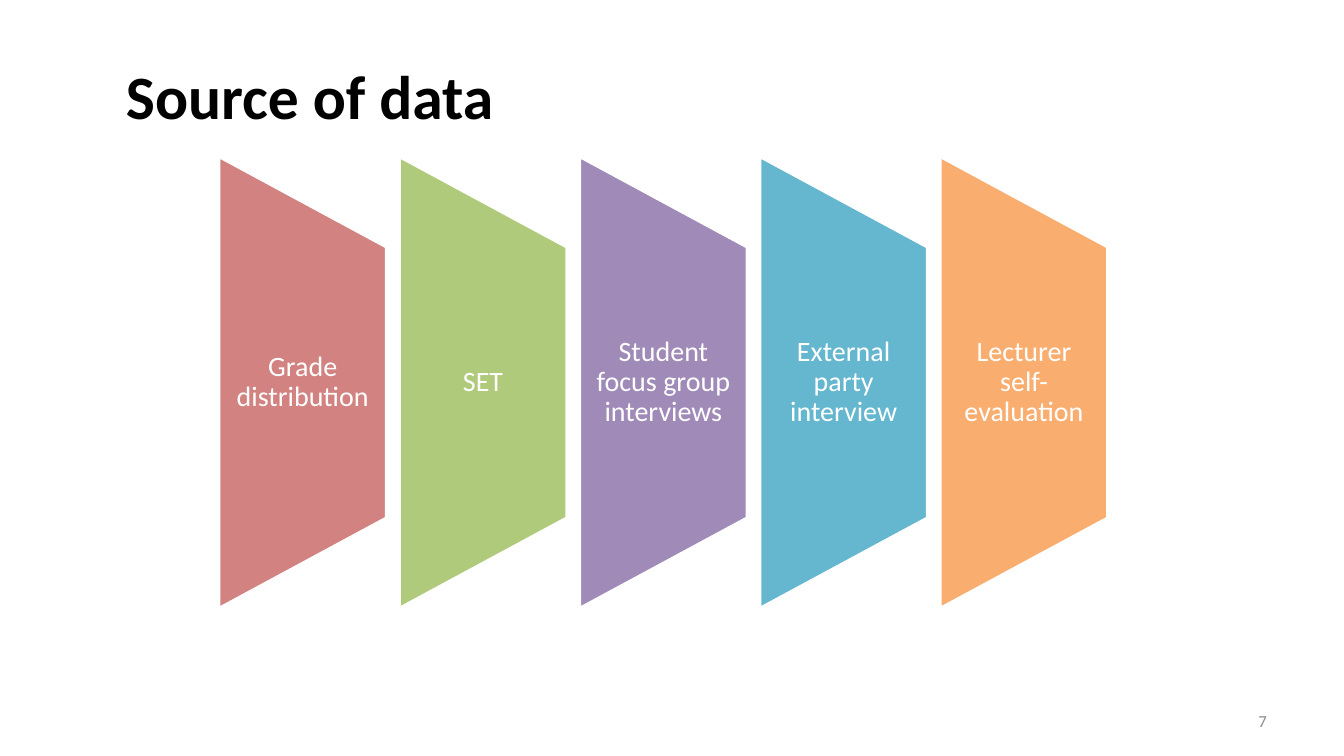
from dataclasses import dataclass

import pptx
import pptx.dml.color
import pptx.enum.shapes
import pptx.enum.text
import pptx.slide
import pptx.text.text
import pptx.util

Pt = pptx.util.Pt
Align = pptx.enum.text.PP_ALIGN

PANEL_LEFT, PANEL_STEP = 156.5, 128.8
PANEL_WIDTH, PANEL_HEIGHT = 119.5, 322.5
PANEL_MIDDLE = 273.2
LABEL_HEIGHT = 193.6


@dataclass(frozen=True)
class DataSource:
    label: str
    colour: str


DATA_SOURCES = [
    DataSource("Grade distribution", "D28280"),
    DataSource("SET", "B0CA7C"),
    DataSource("Student focus group interviews", "9F8AB8"),
    DataSource("External party interview", "64B7CE"),
    DataSource("Lecturer self-evaluation", "F9AD6F"),
]


def rgb(colour: str) -> pptx.dml.color.RGBColor:
    return pptx.dml.color.RGBColor.from_string(colour)


def write(frame: pptx.text.text.TextFrame, text: str, *, size: float,
          colour: str, align: Align, bold: bool = False,
          line_spacing: float = 1.0, side_inset: float = 7.2,
          end_inset: float = 3.6) -> None:
    frame.word_wrap = True
    frame.auto_size = pptx.enum.text.MSO_AUTO_SIZE.NONE
    frame.vertical_anchor = pptx.enum.text.MSO_ANCHOR.MIDDLE
    frame.margin_left = frame.margin_right = Pt(side_inset)
    frame.margin_top = frame.margin_bottom = Pt(end_inset)
    paragraph = frame.paragraphs[0]
    paragraph.alignment = align
    paragraph.line_spacing = line_spacing
    run = paragraph.add_run()
    run.text = text
    run.font.name = "Calibri"
    run.font.size = Pt(size)
    run.font.bold = bold
    run.font.color.rgb = rgb(colour)


def draw_panel(slide: pptx.slide.Slide, source: DataSource, left: float) -> None:
    """Draw a trapezoid on its side, with an upright label over it."""
    centre = left + PANEL_WIDTH / 2
    panel = slide.shapes.add_shape(
        pptx.enum.shapes.MSO_SHAPE.FLOWCHART_MANUAL_OPERATION,
        Pt(centre - PANEL_HEIGHT / 2), Pt(PANEL_MIDDLE - PANEL_WIDTH / 2),
        Pt(PANEL_HEIGHT), Pt(PANEL_WIDTH))
    panel.rotation = 270
    panel.shadow.inherit = False
    panel.fill.solid()
    panel.fill.fore_color.rgb = rgb(source.colour)
    panel.line.color.rgb = rgb("FFFFFF")
    panel.line.width = Pt(2)

    label = slide.shapes.add_textbox(
        Pt(left), Pt(PANEL_MIDDLE - LABEL_HEIGHT / 2),
        Pt(PANEL_WIDTH), Pt(LABEL_HEIGHT))
    write(label.text_frame, source.label, size=20, colour="FFFFFF",
          align=Align.CENTER, line_spacing=0.9, side_inset=10, end_inset=0)


def main() -> None:
    deck = pptx.Presentation()
    deck.slide_width, deck.slide_height = Pt(960), Pt(540)
    slide = deck.slides.add_slide(deck.slide_layouts.get_by_name("Title Only"))

    title = slide.shapes.title
    title.left, title.top = Pt(82.8), Pt(22.5)
    title.width, title.height = Pt(864), Pt(90)
    write(title.text_frame, "Source of data", size=44, colour="000000",
          align=Align.LEFT, bold=True)

    for index, source in enumerate(DATA_SOURCES):
        draw_panel(slide, source, PANEL_LEFT + index * PANEL_STEP)

    page_number = slide.shapes.add_textbox(Pt(688), Pt(500.5), Pt(224), Pt(28.8))
    write(page_number.text_frame, "7", size=12, colour="8C8C8C", align=Align.RIGHT)

    deck.save("out.pptx")


if __name__ == "__main__":
    main()
